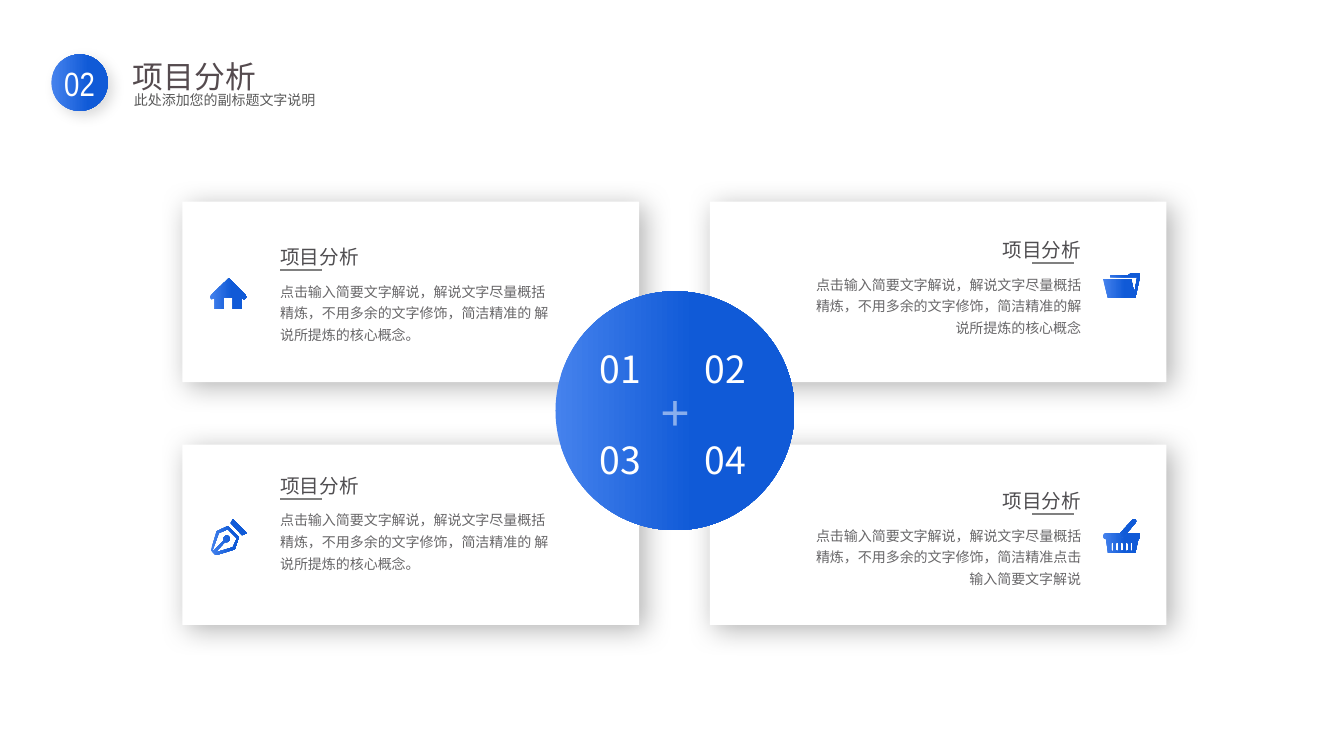
from lxml import etree
from pptx import Presentation
from pptx.dml.color import RGBColor
from pptx.enum import shapes, text
from pptx.oxml.ns import qn
from pptx.util import Inches, Pt

COLORS = {
    "white": "FFFFFF", "light_blue": "4582ED", "blue": "105AD7",
    "title": "554B4F", "subtitle": "595959", "heading": "4F4D50",
    "body": "686769", "rule": "808080", "shadow": "000000",
}
CJK = "Noto Sans CJK SC"
LEFT, CENTER, RIGHT = text.PP_ALIGN.LEFT, text.PP_ALIGN.CENTER, text.PP_ALIGN.RIGHT

HEADING = "项目分析"
LEFT_BODY = "点击输入简要文字解说，解说文字尽量概括精炼，不用多余的文字修饰，简洁精准的 解说所提炼的核心概念。"
BODY_02 = "点击输入简要文字解说，解说文字尽量概括精炼，不用多余的文字修饰，简洁精准的解说所提炼的核心概念"
BODY_04 = "点击输入简要文字解说，解说文字尽量概括精炼，不用多余的文字修饰，简洁精准点击输入简要文字解说"

# Icon outlines, in hundredths of an inch on the slide
HOME = [[(244, 296), (242, 297), (240, 296), (240, 307), (231, 307), (231, 295),
         (222, 295), (222, 307), (213, 307), (213, 296), (212, 296), (210, 297),
         (208.5, 296), (208, 294.5), (209, 293), (227, 276), (244, 293), (245, 294.5)]]
FOLDER = [[(1128, 271), (1122, 271), (1119, 273), (1101, 273), (1101, 275), (1128, 275),
           (1125, 291), (1122, 277), (1094, 277), (1099, 296), (1126, 296), (1131, 273),
           (1130, 271)]]
PEN = [
    [(231, 515), (245, 529), (240, 531), (229, 519)],
    [(237, 533), (226, 522), (215, 527), (209, 546), (214, 551), (233, 545)],
    [(214, 548), (223, 538), (225, 538), (227, 537), (228, 534.5), (227, 532), (225, 531),
     (223, 532), (221.5, 534), (222, 536), (212, 546), (211, 546), (217, 529), (226, 525),
     (235, 534), (231, 543)],
]
SLOT_LEFTS = [1102 + 4.75 * i for i in range(5)]
BASKET = [
    [(1113, 533), (1111, 533), (1110, 531), (1111, 529), (1123, 516), (1124.5, 515),
     (1126, 515), (1127, 517), (1126, 519), (1115, 532)],
    [(1131, 531), (1131, 533), (1129, 535), (1126, 549), (1099, 549), (1097, 535),
     (1095, 534.5), (1094, 533), (1094, 531), (1095, 529.5), (1097, 529), (1110, 529),
     (1109, 531), (1110, 533), (1113, 534), (1115, 533), (1119, 529), (1129, 529),
     (1130.5, 529.5)],
] + [[(x, 539), (x + 1.25, 538), (x + 2.5, 539), (x + 2.5, 546), (x + 1.25, 547), (x, 546)]
     for x in SLOT_LEFTS]


def color(name):
    return RGBColor.from_string(COLORS[name])


def write(shape, content, size, color_name, font=CJK, align=LEFT, spacing=None):
    paragraph = shape.text_frame.paragraphs[0]
    paragraph.text = content
    paragraph.alignment = align
    paragraph.line_spacing = spacing
    run = paragraph.runs[0]
    run.font.size = Pt(size)
    run.font.color.rgb = color(color_name)
    run.font.name = font
    etree.SubElement(run.font._element, qn("a:ea"), typeface=font)
    return run


def add_text(parent, box, content, size, color_name, align=LEFT, wrap=True):
    shape = parent.shapes.add_textbox(*map(Inches, box))
    shape.text_frame.word_wrap = wrap
    shape.text_frame.auto_size = text.MSO_AUTO_SIZE.SHAPE_TO_FIT_TEXT
    write(shape, content, size, color_name, align=align, spacing=1.3)


def add_plain_shape(slide, kind, box):
    shape = slide.shapes.add_shape(kind, *map(Inches, box))
    shape.line.fill.background()
    shape.shadow.inherit = False
    return shape


def add_shadow(shape, opacity, blur):
    effects = shape._element.spPr.find(qn("a:effectLst"))
    shadow = etree.SubElement(effects, qn("a:outerShdw"), blurRad=str(Pt(blur)),
                              dist=str(Pt(5)), dir=str(45 * 60000), algn="tl",
                              rotWithShape="0")
    shade = etree.SubElement(shadow, qn("a:srgbClr"), val=COLORS["shadow"])
    etree.SubElement(shade, qn("a:alpha"), val=str(opacity * 1000))


def fill_gradient(shape, start=0, end=0.58):
    shape.fill.gradient()
    shape.fill.gradient_angle = 0
    stops = zip(shape.fill.gradient_stops, (start, end), ("light_blue", "blue"))
    for stop, position, name in stops:
        stop.position = position
        stop.color.rgb = color(name)


def add_card(slide, left, top):
    card = add_plain_shape(slide, shapes.MSO_SHAPE.RECTANGLE, (left, top, 4.53, 1.79))
    card.fill.solid()
    card.fill.fore_color.rgb = color("white")
    add_shadow(card, 30, 20)


def add_card_text(slide, top, body, align):
    """Group a heading, its short rule and the body, set against one side."""
    heading_left, body_left, rule_left = (
        (2.68, 2.68, 2.78) if align == LEFT else (9.37, 7.95, 10.24))
    group = slide.shapes.add_group_shape()
    add_text(group, (heading_left, top, 1.45, 0.41), HEADING, 14, "heading", align)
    add_text(group, (body_left, top + 0.4, 2.87, 0.76), body, 10, "body", align)
    rule_top = Inches(top + 0.37)
    rule = group.shapes.add_connector(shapes.MSO_CONNECTOR.STRAIGHT, Inches(rule_left),
                                      rule_top, Inches(rule_left + 0.41), rule_top)
    rule.line.color.rgb = color("rule")
    rule.line.width = Pt(1.5)
    etree.SubElement(rule._element.spPr, qn("a:effectLst"))


def add_icon(slide, contours):
    # Tenfold units keep fractions, as the builder rounds to whole numbers
    contours = [[(x * 10, y * 10) for x, y in contour] for contour in contours]
    builder = slide.shapes.build_freeform(*contours[0][0], scale=Inches(1) / 1000)
    for contour in contours:
        if contour is not contours[0]:
            builder.move_to(*contour[0])
        builder.add_line_segments(contour[1:], close=True)
    icon = builder.convert_to_shape()
    icon.line.fill.background()
    icon.shadow.inherit = False
    fill_gradient(icon)


def add_hub(slide):
    hub = add_plain_shape(slide, shapes.MSO_SHAPE.OVAL, (5.51, 2.89, 2.37, 2.37))
    fill_gradient(hub)
    hub.text_frame.vertical_anchor = text.MSO_ANCHOR.MIDDLE
    plus = write(hub, "+", 36, "white", "Arial", CENTER)
    plus_color = plus.font._element.find(".//" + qn("a:srgbClr"))
    etree.SubElement(plus_color, qn("a:alpha"), val="50000")
    for index in range(4):
        row, column = divmod(index, 2)
        box = (5.85 + 1.04 * column, 3.25 + 0.9 * row, 0.64, 0.68)
        add_text(slide, box, f"{index + 1:02}", 26.7, "white", wrap=False)


def add_header(slide):
    badge = add_plain_shape(slide, shapes.MSO_SHAPE.OVAL, (0.51, 0.54, 0.56, 0.56))
    fill_gradient(badge, 0.01, 0.66)
    add_shadow(badge, 15, 10)
    badge.text_frame.word_wrap = False
    badge.text_frame.vertical_anchor = text.MSO_ANCHOR.MIDDLE
    write(badge, "02", 24, "white", "Arial Narrow", CENTER)
    group = slide.shapes.add_group_shape()
    add_text(group, (1.22, 0.41, 1.44, 0.58), HEADING, 22, "title", wrap=False)
    add_text(group, (1.23, 0.81, 3.38, 0.32), "此处添加您的副标题文字说明", 10, "subtitle")


def main():
    presentation = Presentation()
    presentation.slide_width = Inches(13.33)
    presentation.slide_height = Inches(7.5)
    slide = presentation.slides.add_slide(presentation.slide_layouts[6])
    for top in (4.41, 2):
        for left in (7.04, 1.81):
            add_card(slide, left, top)
    add_card_text(slide, 2.31, LEFT_BODY, LEFT)
    add_card_text(slide, 4.58, LEFT_BODY, LEFT)
    add_card_text(slide, 4.73, BODY_04, RIGHT)
    add_card_text(slide, 2.24, BODY_02, RIGHT)
    for contours in (PEN, HOME, BASKET, FOLDER):
        add_icon(slide, contours)
    add_hub(slide)
    add_header(slide)
    presentation.save("out.pptx")


if __name__ == "__main__":
    main()
